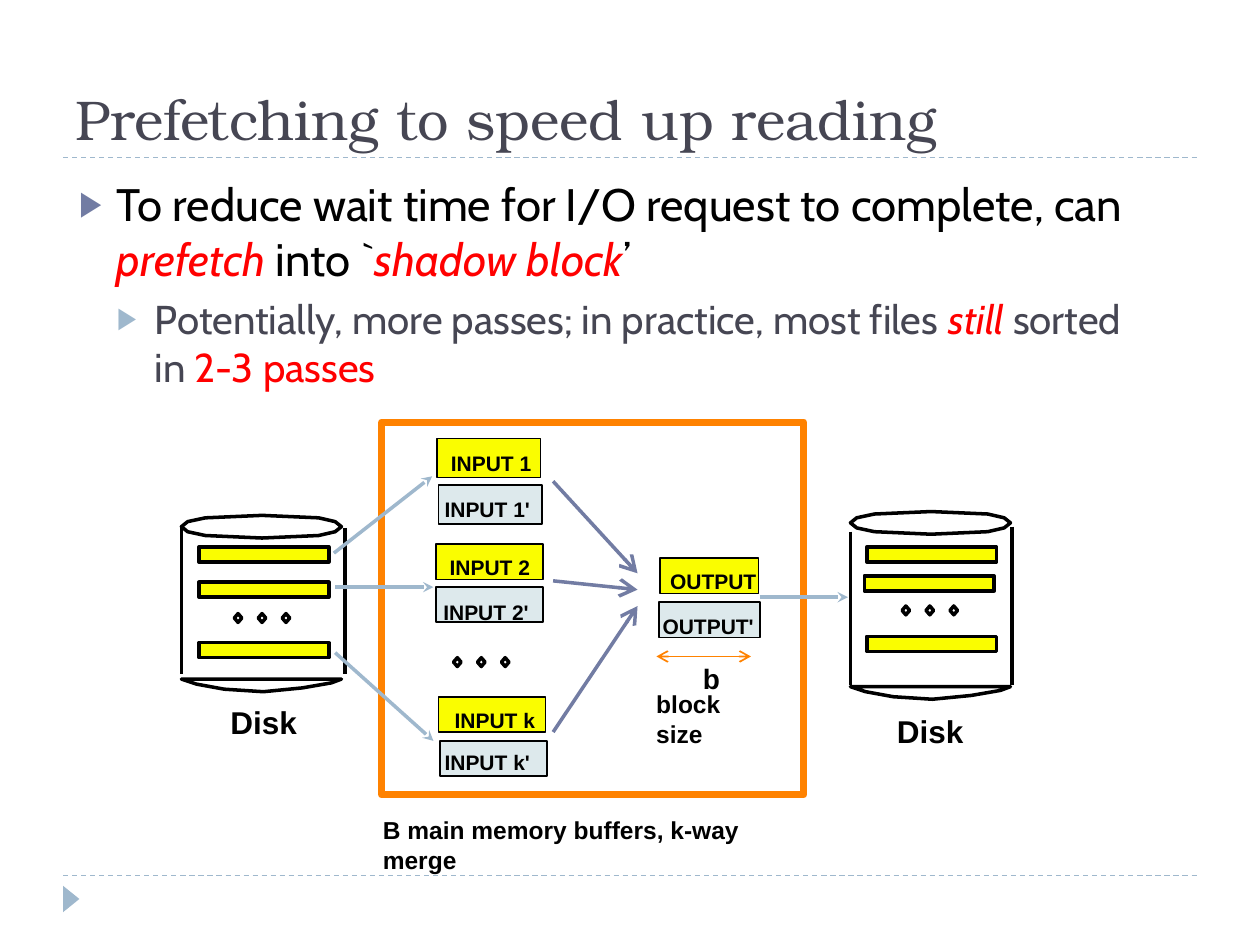
import pptx
import pptx.dml.color
import pptx.enum.dml
import pptx.enum.shapes
import pptx.enum.text
import pptx.oxml
import pptx.util
from lxml import etree

SHAPE = pptx.enum.shapes.MSO_SHAPE
NS = "http://schemas.openxmlformats.org/drawingml/2006/main"
BLACK, RED, SLATE = "000000", "FF0000", "464653"
YELLOW, PALE, ORANGE = "FAFD00", "DDE9EC", "FF8200"
SKY, INDIGO = "9FB8CD", "727CA3"

# Half of the lid's rim, and the curved base, from the disk's left edge
RIM = [(1.27, 0.09), (1.22, 0.05), (1.09, 0.02), (0.64, 0),
       (0.19, 0.02), (0.05, 0.05), (0, 0.09)]
BASE = [(0, 0), (0.12, 0.04), (0.34, 0.08), (0.65, 0.1),
        (0.96, 0.07), (1.19, 0.03), (1.27, 0)]


def grid(*nums):
    """The layout grid has a unit of 2.54 cm."""
    return [pptx.util.Cm(n * 2.54) for n in nums]


def color(code):
    return pptx.dml.color.RGBColor.from_string(code)


def paint(shape, fill, line, width):
    shape.shadow.inherit = False
    if fill:
        shape.fill.solid()
        shape.fill.fore_color.rgb = color(fill)
    else:
        shape.fill.background()
    if line:
        shape.line.color.rgb = color(line)
        shape.line.width = pptx.util.Pt(width)
    else:
        shape.line.fill.background()


def block(slide, box, fill, line=BLACK, width=1, kind=SHAPE.RECTANGLE):
    shape = slide.shapes.add_shape(kind, *grid(*box))
    paint(shape, fill, line, width)
    return shape


def curve(slide, left, top, points):
    spots = [grid(left + x, top + y) for x, y in points]
    form = slide.shapes.build_freeform(*spots[0], scale=1.0)
    form.add_line_segments(spots[1:], close=True)
    paint(form.convert_to_shape(), None, BLACK, 2)


def line(slide, ends, code, width, head=None, tail=None, size="med"):
    link = slide.shapes.add_connector(
        pptx.enum.shapes.MSO_CONNECTOR.STRAIGHT, *grid(*ends))
    link.line.color.rgb = color(code)
    link.line.width = pptx.util.Pt(width)
    stroke = link.line._get_or_add_ln()
    for tag, kind in (("headEnd", head), ("tailEnd", tail)):
        if kind:
            etree.SubElement(stroke, f"{{{NS}}}{tag}", type=kind, w=size, len=size)
    etree.SubElement(link._element.spPr, f"{{{NS}}}effectLst")
    return link


def style(run, size, face, code, bold=False, slant=False):
    run.font.size = pptx.util.Pt(size)
    run.font.name = face
    run.font.color.rgb = color(code)
    run.font.bold = bold
    run.font.italic = slant


def label(slide, box, text, size, face="Arial", code=BLACK, bold=True):
    frame = slide.shapes.add_textbox(*grid(*box)).text_frame
    frame.text = text
    frame.word_wrap = True
    style(frame.paragraphs[0].runs[0], size, face, code, bold)
    return frame


def bullet(para, parts, size, indent, gap, code, scale):
    """Each part is (text, colour, italic)."""
    para.space_before = pptx.util.Pt(gap)
    for text, tint, slant in parts:
        run = para.add_run()
        run.text = text
        style(run, size, "Cabin", tint, slant=slant)
    props = para._p.get_or_add_pPr()
    left, hang = grid(indent, -0.3)
    props.set("marL", str(left))
    props.set("indent", str(hang))
    tint = etree.SubElement(props, f"{{{NS}}}buClr")
    etree.SubElement(tint, f"{{{NS}}}srgbClr", val=code)
    etree.SubElement(props, f"{{{NS}}}buSzPct", val=str(scale * 1000))
    etree.SubElement(props, f"{{{NS}}}buFont", typeface="Arial")
    etree.SubElement(props, f"{{{NS}}}buChar", char="▶")


def dots(slide, left, top):
    for step in range(3):
        block(slide, (left + step * 0.19, top, 0.06, 0.07), None,
              width=2, kind=SHAPE.DIAMOND)


def disk(slide, left, top, base, sides, bars, name):
    """Sides are (x, top, bottom); bars are (x, y)."""
    mirror = [(x, 0.18 - y) for x, y in RIM[-2:0:-1]]
    curve(slide, left, top, RIM + mirror)
    curve(slide, left, base, BASE)
    for x, high, low in sides:
        line(slide, (x, high, x, low), BLACK, 2)
    for x, y in bars:
        block(slide, (x, y, 1.03, 0.12), YELLOW, width=2)
    label(slide, (*name, 0.8, 0.4), "Disk", 18)


def frame(slide):
    """Title, rules and corner mark."""
    for y in (1.25, 6.95):
        rule = line(slide, (0.5, y, 9.5, y), SKY, 0.75)
        rule.line.dash_style = pptx.enum.dml.MSO_LINE.DASH
    mark = block(slide, (0.46, 7.07, 0.21, 0.13), SKY, None,
                 kind=SHAPE.ISOSCELES_TRIANGLE)
    mark.rotation = 90
    title = label(slide, (0.5, 0.17, 9, 1.08), "Prefetching to speed up reading",
                  32, "TeX Gyre Bonum", SLATE, False)
    title.vertical_anchor = pptx.enum.text.MSO_ANCHOR.BOTTOM


def body(slide):
    text = slide.shapes.add_textbox(*grid(0.53, 1.35, 8.5, 1.85)).text_frame
    text.word_wrap = True
    bullet(text.paragraphs[0], [
        ("To reduce wait time for I/O request to complete, can ", BLACK, False),
        ("prefetch ", RED, True),
        ("into `", BLACK, False),
        ("shadow block", RED, True),
        ("’", BLACK, False)], 26, 0.3, 6, INDIGO, 76)
    para = text.add_paragraph()
    para.level = 1
    bullet(para, [
        ("Potentially, more passes; in practice, most files ", SLATE, False),
        ("still ", RED, True),
        ("sorted in ", SLATE, False),
        ("2-3 passes", RED, False)], 23, 0.6, 5, SKY, 75)


def memory(slide):
    block(slide, (3.03, 3.35, 3.35, 2.96), None, ORANGE, 4)

    # Each buffer: its box, its fill, its label and the label's corner
    for box, fill, text, spot in [
            ((3.47, 3.48, 0.82, 0.31), YELLOW, "INPUT 1", (3.48, 3.53)),
            ((3.48, 3.85, 0.82, 0.31), PALE, "INPUT 1'", (3.43, 3.89)),
            ((3.46, 4.32, 0.85, 0.28), YELLOW, "INPUT 2", (3.47, 4.35)),
            ((3.46, 4.66, 0.85, 0.28), PALE, "INPUT 2'", (3.42, 4.71)),
            ((3.48, 5.53, 0.85, 0.28), YELLOW, "INPUT k", (3.51, 5.57)),
            ((3.49, 5.88, 0.85, 0.28), PALE, "INPUT k'", (3.43, 5.9)),
            ((5.24, 4.43, 0.78, 0.28), YELLOW, "OUTPUT", (5.22, 4.46)),
            ((5.23, 4.78, 0.8, 0.28), PALE, "OUTPUT'", (5.16, 4.82))]:
        block(slide, box, fill)
        label(slide, (*spot, 1.05, 0.3), text, 12)
    dots(slide, 3.6, 5.22)

    # Merge arrows and block size
    for start, end in [(3.82, 4.55), (4.61, 4.68), (5.81, 4.81)]:
        line(slide, (4.39, start, 5.06, end), INDIGO, 2, tail="arrow", size="lg")
    line(slide, (5.21, 5.21, 5.96, 5.21), ORANGE, 1, "arrow", "arrow")
    label(slide, (5.11, 5.42, 1.05, 0.56), "block size", 14)
    label(slide, (5.48, 5.2, 0.4, 0.36), "b", 16)
    label(slide, (2.94, 6.42, 3.66, 0.56), "B main memory buffers, k-way merge", 14)


def main():
    deck = pptx.Presentation()
    deck.slide_width, deck.slide_height = grid(10, 7.5)
    slide = deck.slides.add_slide(deck.slide_layouts[6])
    frame(slide)
    body(slide)
    memory(slide)

    # Disks on both sides
    disk(slide, 1.44, 4.09, 5.39, [(1.44, 4.19, 5.35), (2.74, 4.19, 5.35)],
         [(1.58, 4.34), (1.58, 4.62), (1.58, 5.1)], (1.73, 5.53))
    dots(slide, 1.86, 4.87)
    disk(slide, 6.75, 4.06, 5.45, [(6.75, 4.22, 5.44), (8.03, 4.18, 5.44)],
         [(6.88, 4.34), (6.86, 4.57), (6.88, 5.05)], (7.02, 5.6))
    dots(slide, 7.16, 4.81)

    # Transfers between disks and memory
    for ends in [(2.65, 4.39, 3.43, 3.78), (2.66, 4.66, 3.44, 4.66),
                 (2.66, 5.18, 3.44, 5.88), (6.03, 4.74, 6.73, 4.74)]:
        line(slide, ends, SKY, 2, tail="stealth")
    deck.save("out.pptx")


if __name__ == "__main__":
    main()
